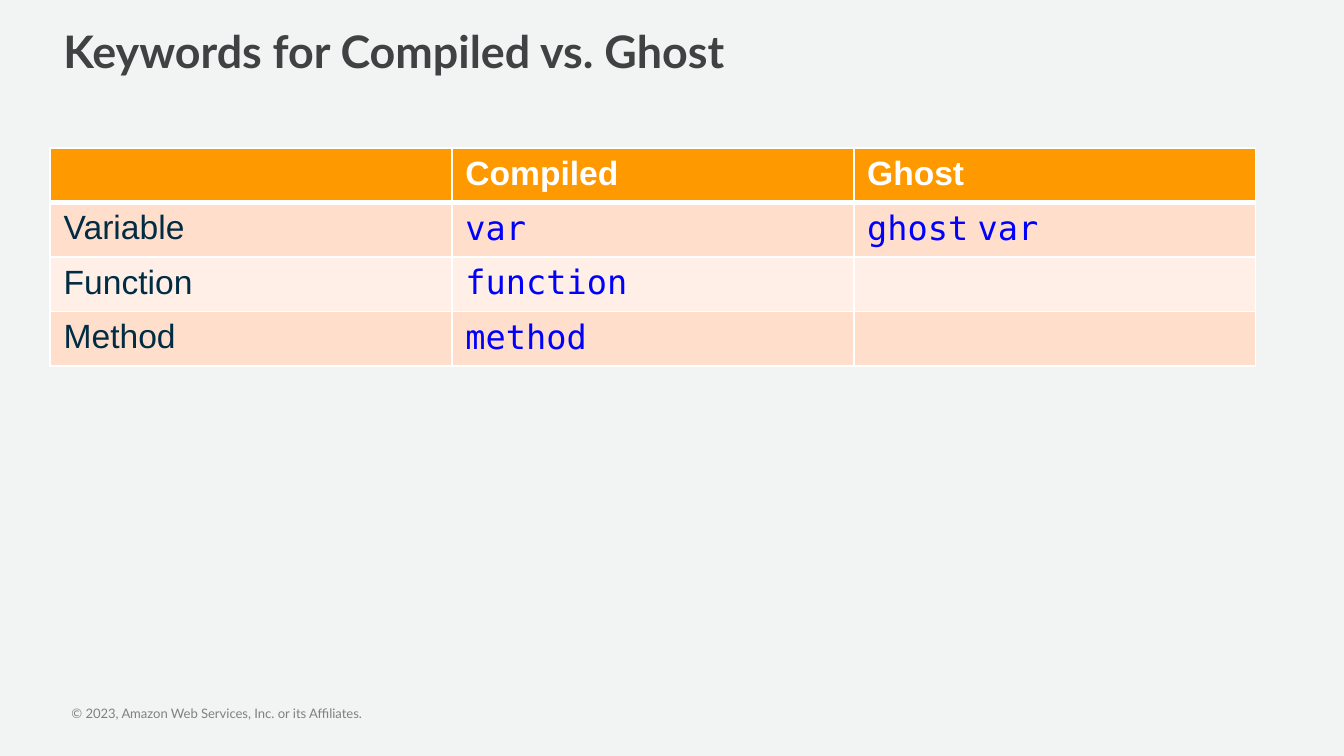
"""Build a slide with a table of keywords for compiled and ghost code."""
from lxml import etree
from pptx import Presentation
from pptx.dml.color import RGBColor
from pptx.enum import text
from pptx.oxml import ns
from pptx.util import Cm, Pt

HUES = {"back": "F2F4F4", "title": "414042", "foot": "808080", "head": "FF9900",
        "odd": "FFDECC", "even": "FFEFE7", "line": "FFFFFF", "label": "002D43",
        "code": "0000FF"}
ROWS = [["", "Compiled", "Ghost"],
        ["Variable", "var", "ghost var"],
        ["Function", "function", ""],
        ["Method", "method", ""]]


def style(font, name, size, hue, bold=False):
    font.name, font.size, font.bold = name, Pt(size), bold
    font.color.rgb = RGBColor.from_string(HUES[hue])


def edge(cell, side, width):
    line = etree.SubElement(cell._tc.get_or_add_tcPr(), ns.qn(f"a:ln{side}"), w=str(Pt(width)))
    fill = etree.SubElement(line, ns.qn("a:solidFill"))
    etree.SubElement(fill, ns.qn("a:srgbClr"), val=HUES["line"])


deck = Presentation()
deck.slide_width, deck.slide_height = Cm(25.4), Cm(14.29)
slide = deck.slides.add_slide(deck.slide_layouts[6])
slide.background.fill.solid()
slide.background.fill.fore_color.rgb = RGBColor.from_string(HUES["back"])

foot = slide.shapes.add_textbox(Cm(1.35), Cm(13.34), Cm(12.34), Cm(0.3)).text_frame
foot.margin_left = foot.margin_top = foot.margin_right = foot.margin_bottom = 0
foot.word_wrap = True
foot.auto_size = text.MSO_AUTO_SIZE.SHAPE_TO_FIT_TEXT
foot.text = "© 2023, Amazon Web Services, Inc. or its Affiliates."
style(foot.paragraphs[0].font, "Lato", 7, "foot")

title = slide.shapes.add_textbox(Cm(0.95), Cm(0.33), Cm(22.78), Cm(1.52)).text_frame
title.word_wrap = True
title.text = "Keywords for Compiled vs. Ghost"
style(title.paragraphs[0].font, "Lato", 24, "title", True)

grid = slide.shapes.add_table(4, 3, Cm(0.95), Cm(2.8), Cm(22.78), Cm(4.12)).table
for r, row in enumerate(ROWS):
    for c, words in enumerate(row):
        cell = grid.cell(r, c)
        for side in "LRTB":
            thick = (r, side) in [(0, "B"), (1, "T")]
            edge(cell, side, 3 if thick else 1)
        cell.fill.solid()
        band = "head" if r == 0 else "odd" if r % 2 else "even"
        cell.fill.fore_color.rgb = RGBColor.from_string(HUES[band])
        para = cell.text_frame.paragraphs[0]
        if r and c:
            style(para.font, "Arial", 18, "code")
            for part in words.replace(" ", "| |").split("|") if words else []:
                run = para.add_run()
                run.text = part
                run.font.name = "Arial" if part == " " else "DejaVu Sans Mono"
        else:
            para.text = words
            style(para.font, "Arial", 18, "label" if r else "line", r == 0)

deck.save("out.pptx")
